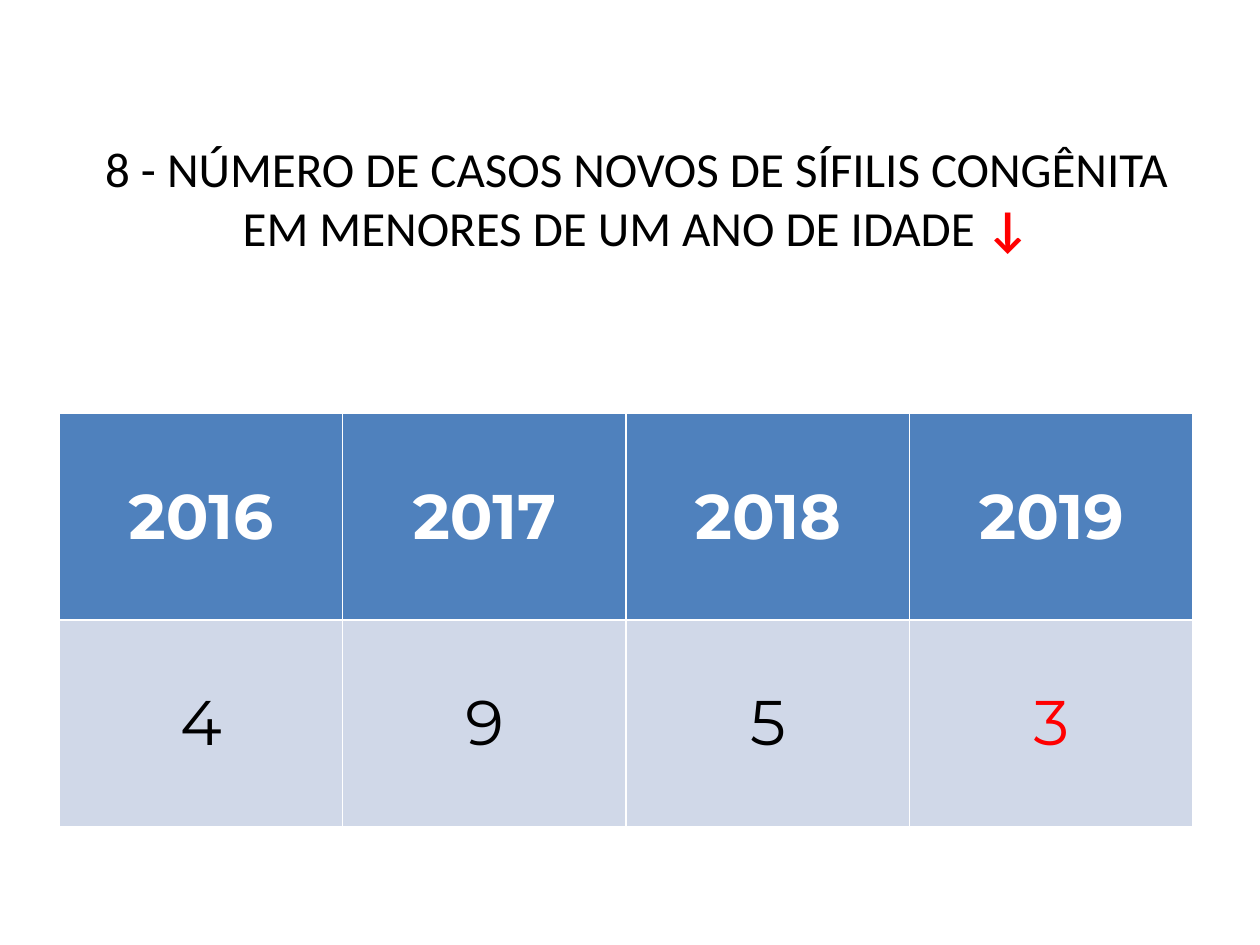
from dataclasses import dataclass

from pptx import Presentation
from pptx.dml.color import RGBColor
from pptx.enum.text import MSO_ANCHOR, PP_ALIGN
from pptx.util import Inches, Pt

CENTER = PP_ALIGN.CENTER
MIDDLE = MSO_ANCHOR.MIDDLE
TITLE_ONLY = 5


@dataclass(frozen=True)
class Theme:
    title_font: str = "Calibri"
    table_font: str = "Montserrat"
    title_size: int = 28
    table_size: int = 36
    text: str = "000000"
    highlight: str = "FF0000"
    header_text: str = "FFFFFF"
    header_fill: str = "4F81BD"
    body_fill: str = "D0D8E8"


@dataclass(frozen=True)
class YearCount:
    year: str
    cases: str
    color: str


THEME = Theme()
COUNTS = [
    YearCount("2016", "4", THEME.text),
    YearCount("2017", "9", THEME.text),
    YearCount("2018", "5", THEME.text),
    YearCount("2019", "3", THEME.highlight),
]
COLUMN_WIDTH, ROW_HEIGHT = 2.25, 1.64


def add_run(paragraph, text: str, font: str, size: int, color: str, bold: bool = False) -> None:
    run = paragraph.add_run()
    run.text = text
    run.font.name = font
    run.font.size = Pt(size)
    run.font.bold = bold
    run.font.color.rgb = RGBColor.from_string(color)


def fill_cell(cell, text: str, fill: str, color: str, bold: bool) -> None:
    cell.fill.solid()
    cell.fill.fore_color.rgb = RGBColor.from_string(fill)
    cell.vertical_anchor = MIDDLE
    paragraph = cell.text_frame.paragraphs[0]
    paragraph.alignment = CENTER
    add_run(paragraph, text, THEME.table_font, THEME.table_size, color, bold)


def write_title(title) -> None:
    title.left, title.top = Inches(0.55), Inches(0.16)
    title.width, title.height = Inches(9), Inches(2.81)
    title.text_frame.vertical_anchor = MIDDLE
    heading = title.text_frame.paragraphs[0]
    heading.alignment = CENTER
    add_run(
        heading,
        "8 - NÚMERO DE CASOS NOVOS DE SÍFILIS CONGÊNITA EM MENORES DE UM ANO DE IDADE ",
        THEME.title_font, THEME.title_size, THEME.text,
    )
    add_run(heading, "↓", THEME.title_font, THEME.title_size, THEME.highlight, bold=True)


def add_case_table(slide, counts: list[YearCount]) -> None:
    """Draw years over case counts; the default table style supplies the white rules."""
    table = slide.shapes.add_table(
        2, len(counts), Inches(0.47), Inches(3.28),
        Inches(COLUMN_WIDTH * len(counts)), Inches(ROW_HEIGHT * 2),
    ).table
    for column, count in enumerate(counts):
        fill_cell(table.cell(0, column), count.year, THEME.header_fill, THEME.header_text, True)
        fill_cell(table.cell(1, column), count.cases, THEME.body_fill, count.color, False)


def main() -> None:
    deck = Presentation()
    deck.slide_width, deck.slide_height = Inches(10), Inches(7.5)
    slide = deck.slides.add_slide(deck.slide_layouts[TITLE_ONLY])
    write_title(slide.shapes.title)
    add_case_table(slide, COUNTS)
    deck.save("out.pptx")


if __name__ == "__main__":
    main()
